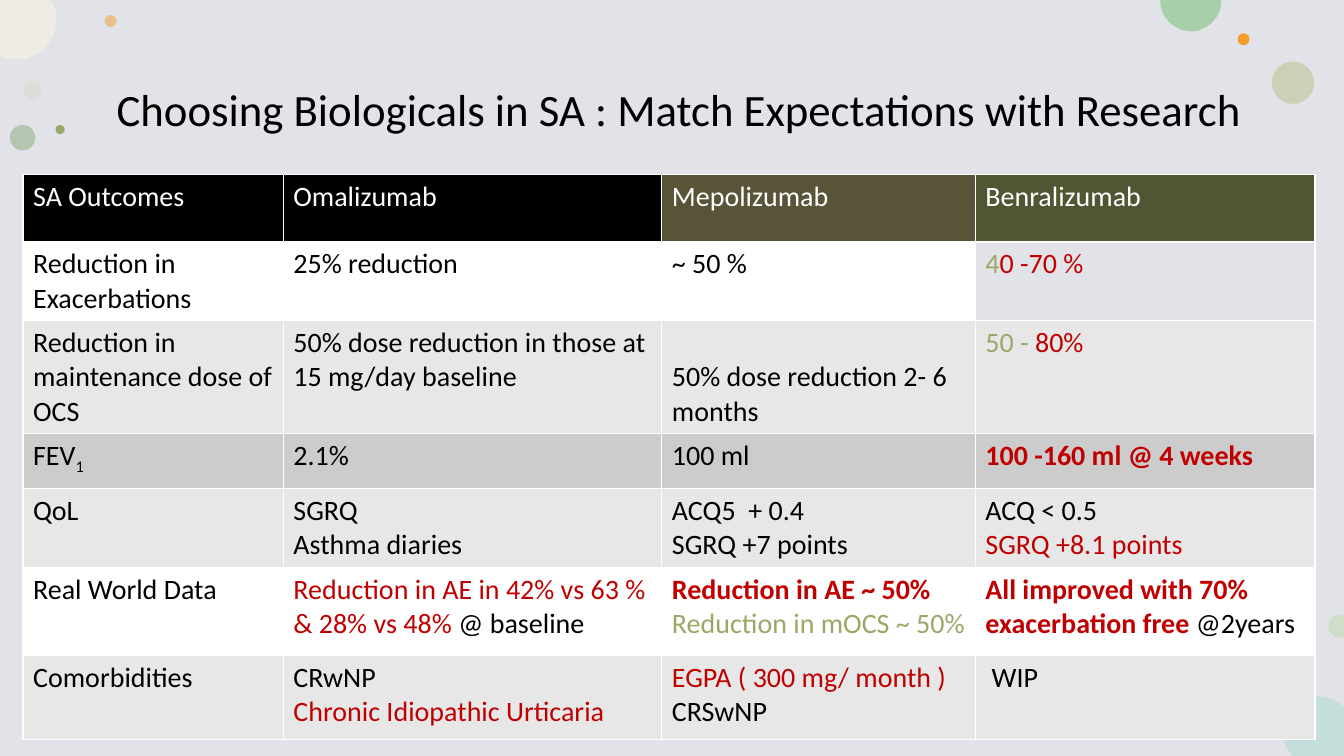
from lxml.etree import SubElement
from pptx import Presentation
from pptx.dml.color import RGBColor
from pptx.enum.shapes import MSO_SHAPE
from pptx.enum.text import MSO_ANCHOR, PP_ALIGN
from pptx.oxml.ns import qn
from pptx.util import Cm, Pt

FONT = "Calibri"
SLIDE_WIDTH, SLIDE_HEIGHT = 33.87, 19.05

BLACK = RGBColor(0x00, 0x00, 0x00)
WHITE = RGBColor(0xFF, 0xFF, 0xFF)
RED = RGBColor(0xC0, 0x00, 0x00)
OLIVE = RGBColor(0x99, 0xA8, 0x68)
BROWN = RGBColor(0x59, 0x53, 0x38)
DARK_OLIVE = RGBColor(0x4E, 0x56, 0x32)
LIGHT_GREY = RGBColor(0xE7, 0xE7, 0xE7)
MID_GREY = RGBColor(0xCC, 0xCC, 0xCC)
BACKGROUND = RGBColor(0xE2, 0xE3, 0xE8)
ORANGE = RGBColor(0xF3, 0x9E, 0x29)
SAGE = RGBColor(0x8A, 0xAB, 0x79)
PALE_SAGE = RGBColor(0xD6, 0xDC, 0xC3)
KHAKI = RGBColor(0xC2, 0xCB, 0xA4)
CREAM = RGBColor(0xEE, 0xEC, 0xE4)
MINT = RGBColor(0xA7, 0xD0, 0xAA)
PALE_MINT = RGBColor(0xD0, 0xDD, 0xC9)
AQUA = RGBColor(0xC4, 0xDE, 0xDB)

# left, top, diameter, colour, opacity in percent
BUBBLES = [
    (0.58, 2.03, 0.48, PALE_SAGE, 50),
    (2.64, 0.38, 0.3, ORANGE, 50),
    (0.25, 3.15, 0.64, SAGE, 50),
    (32.05, 1.55, 1.07, KHAKI, 72),
    (31.19, 0.84, 0.3, ORANGE, 100),
    (1.4, 3.15, 0.23, OLIVE, 100),
]
# colour, then the outline: (x, y) is a straight step,
# six numbers are a curve with two control points and its end
EDGE_BUBBLES = [
    (AQUA, [(33.22, 17.55), (33.47, 17.55, 33.68, 17.65, 33.87, 17.81),
            (33.87, 19.05), (32.59, 19.05), (32.54, 19.0),
            (32.41, 18.85, 32.33, 18.65, 32.33, 18.44),
            (32.33, 17.93, 32.74, 17.55, 33.22, 17.55)]),
    (CREAM, [(0, 0), (1.27, 0), (1.35, 0.13),
             (1.4, 0.23, 1.42, 0.36, 1.42, 0.51),
             (1.42, 1.04, 0.97, 1.5, 0.43, 1.5),
             (0.28, 1.5, 0.15, 1.47, 0.05, 1.42), (0, 1.4)]),
    (MINT, [(29.26, 0), (30.78, 0), (30.78, 0.03),
            (30.78, 0.43, 30.43, 0.79, 30.02, 0.79),
            (29.59, 0.79, 29.24, 0.43, 29.24, 0.03)]),
    (PALE_MINT, [(33.76, 15.49), (33.87, 15.52), (33.87, 16.05),
                 (33.76, 16.08), (33.6, 16.08, 33.48, 15.95, 33.48, 15.77),
                 (33.48, 15.62, 33.6, 15.49, 33.76, 15.49)]),
]

COLUMN_WIDTHS = [6.56, 9.54, 7.9, 8.56]
ROW_HEIGHTS = [1.7, 1.9, 2.74, 1.39, 1.9, 2.21, 2.13]
HEADER_FILLS = [BLACK, BLACK, BROWN, DARK_OLIVE]
BODY_FILLS = [WHITE, LIGHT_GREY, MID_GREY, LIGHT_GREY, WHITE, LIGHT_GREY]
HEADERS = ["SA Outcomes", "Omalizumab", "Mepolizumab", "Benralizumab"]

# A cell is a list of paragraphs; a paragraph is a list of runs:
# plain text, or (text, colour, "bold" or "subscript").
BODY = [
    [[["Reduction in Exacerbations"]], [["25% reduction"]], [["~ 50 %"]],
     [[("4", OLIVE), ("0 -70 %", RED)]]],
    [[["Reduction in maintenance dose of OCS"]],
     [["50% dose reduction in those at 15 mg/day baseline"]],
     [["50% dose reduction 2- 6 months"]],
     [[("50 - ", OLIVE), ("80%", RED)]]],
    [[["FEV", ("1", BLACK, "subscript")]], [["2.1%"]], [["100 ml"]],
     [[("100 -160 ml @ 4 weeks", RED, "bold")]]],
    [[["QoL"]], [["SGRQ"], ["Asthma diaries"]],
     [["ACQ5  + 0.4"], ["SGRQ +7 points"]],
     [["ACQ < 0.5"], [("SGRQ +8.1 points", RED)]]],
    [[["Real World Data"]],
     [[("Reduction in AE in 42% vs 63 % & 28% vs 48% ", RED), "@ baseline"]],
     [[("Reduction in AE ~ 50%", RED, "bold")],
      [("Reduction in mOCS ~ 50%", OLIVE)]],
     [[("All improved with 70% exacerbation free ", RED, "bold"), "@2years"]]],
    [[["Comorbidities"]],
     [["CRwNP"], [("Chronic Idiopathic Urticaria", RED)]],
     [[("EGPA ( 300 mg/ month )", RED)], ["CRSwNP"]], [[" WIP"]]],
]


def add_run(paragraph, text, colour=BLACK, style=None, size=20):
    run = paragraph.add_run()
    run.text = text
    run.font.name = FONT
    run.font.size = Pt(size)
    run.font.color.rgb = colour
    run.font.bold = style == "bold"
    if style == "subscript":
        run.font._element.set("baseline", "-25000")


def paint(shape, colour, opacity=100):
    shape.shadow.inherit = False
    shape.fill.solid()
    shape.fill.fore_color.rgb = colour
    shape.line.fill.background()
    if opacity < 100:
        colour_element = shape._element.spPr.find(".//" + qn("a:srgbClr"))
        SubElement(colour_element, qn("a:alpha"), val=str(opacity * 1000))


def add_backdrop(slide):
    backdrop = slide.shapes.add_shape(
        MSO_SHAPE.RECTANGLE, 0, 0, Cm(SLIDE_WIDTH), Cm(SLIDE_HEIGHT))
    paint(backdrop, BACKGROUND)


def add_bubble(slide, left, top, diameter, colour, opacity):
    bubble = slide.shapes.add_shape(
        MSO_SHAPE.OVAL, Cm(left), Cm(top), Cm(diameter), Cm(diameter))
    paint(bubble, colour, opacity)


def add_edge_bubble(slide, colour, outline):
    """Add a circle cut off at the slide edge, with its arcs as curves."""
    ends = [(Cm(step[-2]), Cm(step[-1])) for step in outline]
    builder = slide.shapes.build_freeform(*ends[0])
    builder.add_line_segments(ends[1:], close=True)
    bubble = builder.convert_to_shape()
    lines = list(bubble._element.iter(qn("a:lnTo")))
    for line, step in zip(lines, outline[1:]):
        if len(step) == 6:
            line.clear()
            curve = SubElement(line.getparent(), qn("a:cubicBezTo"))
            line.getparent().replace(line, curve)
            for x, y in zip(step[::2], step[1::2]):
                SubElement(curve, qn("a:pt"), x=str(Cm(x) - bubble.left),
                           y=str(Cm(y) - bubble.top))
    paint(bubble, colour)


def set_title(slide, text):
    title = slide.shapes.title
    title.left, title.top = Cm(1.55), Cm(1.78)
    title.width, title.height = Cm(31.14), Cm(2.06)
    title.text_frame.vertical_anchor = MSO_ANCHOR.MIDDLE
    paragraph = title.text_frame.paragraphs[0]
    paragraph.alignment = PP_ALIGN.CENTER
    paragraph.line_spacing = 0.9
    add_run(paragraph, text, size=32)


def fill_cell(cell, paragraphs, fill):
    if fill is None:
        cell.fill.background()
    else:
        cell.fill.solid()
        cell.fill.fore_color.rgb = fill
    frame = cell.text_frame
    for index, runs in enumerate(paragraphs):
        paragraph = frame.add_paragraph() if index else frame.paragraphs[0]
        for run in runs:
            add_run(paragraph, *([run] if isinstance(run, str) else run))


def add_outcomes_table(slide):
    """Add the table; its default style draws the white borders."""
    table = slide.shapes.add_table(
        len(ROW_HEIGHTS), len(COLUMN_WIDTHS), Cm(0.58), Cm(4.4),
        Cm(sum(COLUMN_WIDTHS)), Cm(sum(ROW_HEIGHTS))).table
    for column, width in zip(table.columns, COLUMN_WIDTHS):
        column.width = Cm(width)
    for row, height in zip(table.rows, ROW_HEIGHTS):
        row.height = Cm(height)
    for column, (header, fill) in enumerate(zip(HEADERS, HEADER_FILLS)):
        fill_cell(table.cell(0, column), [[(header, WHITE)]], fill)
    for row, (cells, row_fill) in enumerate(zip(BODY, BODY_FILLS), start=1):
        for column, paragraphs in enumerate(cells):
            fill = None if (row, column) == (1, 3) else row_fill
            fill_cell(table.cell(row, column), paragraphs, fill)
    table.cell(2, 2).vertical_anchor = MSO_ANCHOR.BOTTOM


def main():
    presentation = Presentation()
    presentation.slide_width = Cm(SLIDE_WIDTH)
    presentation.slide_height = Cm(SLIDE_HEIGHT)
    slide = presentation.slides.add_slide(presentation.slide_layouts[5])
    add_backdrop(slide)
    for bubble in BUBBLES:
        add_bubble(slide, *bubble)
    for colour, outline in EDGE_BUBBLES:
        add_edge_bubble(slide, colour, outline)
    # Bring the title in front of the backdrop.
    slide.shapes._spTree.append(slide.shapes.title._element)
    set_title(slide, "Choosing Biologicals in SA : Match Expectations with Research")
    add_outcomes_table(slide)
    presentation.save("out.pptx")


if __name__ == "__main__":
    main()
